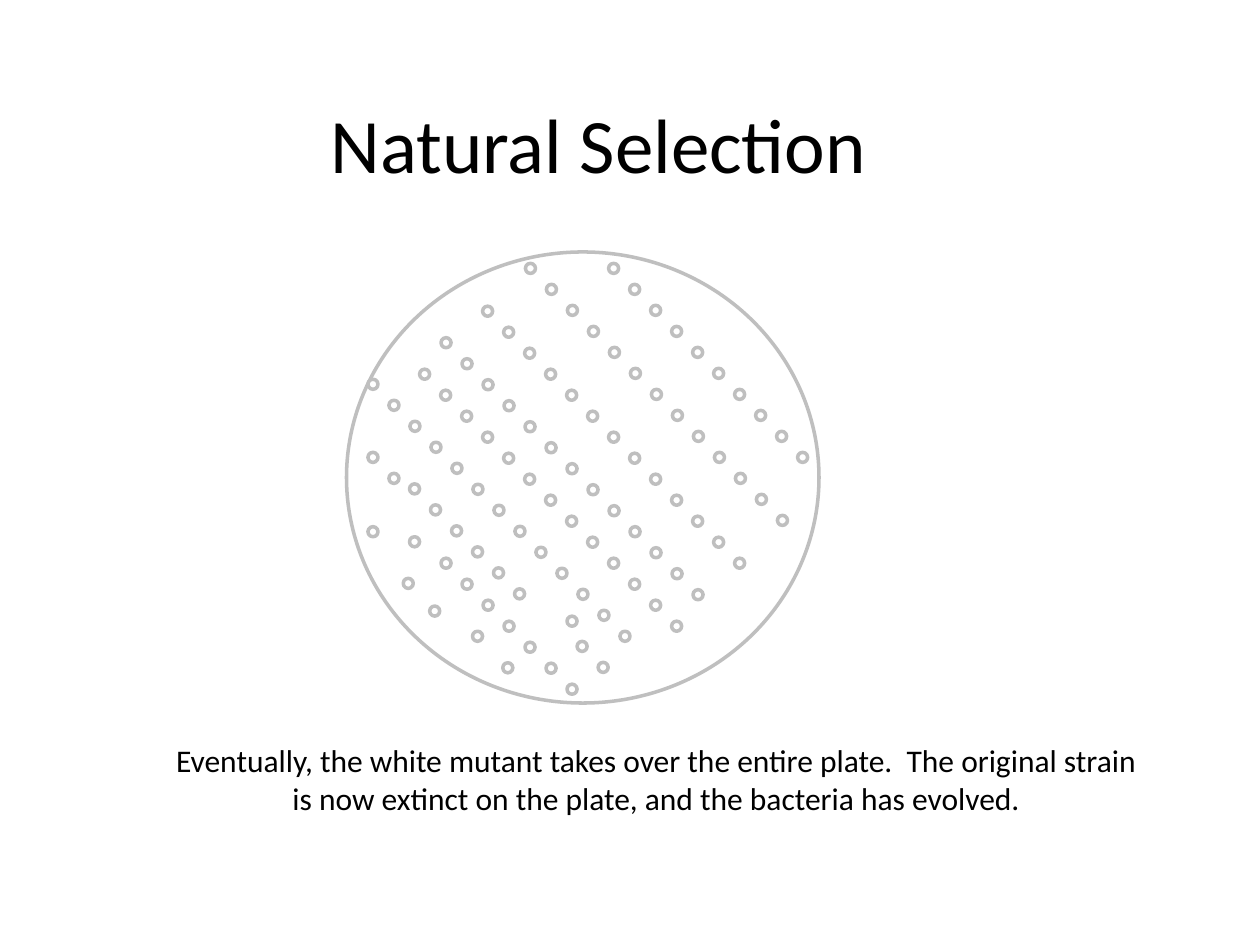
from dataclasses import dataclass

from pptx import Presentation
from pptx import util as u
from pptx.dml.color import RGBColor
from pptx.enum import shapes, text


@dataclass(frozen=True)
class Theme:
    font: str = "Calibri"
    ink: RGBColor = RGBColor(0x00, 0x00, 0x00)
    white: RGBColor = RGBColor(0xFF, 0xFF, 0xFF)
    outline: RGBColor = RGBColor(0xBF, 0xBF, 0xBF)
    outline_width: int = u.Pt(2)
    title_size: int = u.Pt(44)
    caption_size: int = u.Pt(18)


theme = Theme()


def add_ring(slide, left, top, width, height):
    ring = slide.shapes.add_shape(
        shapes.MSO_SHAPE.OVAL,
        u.Inches(left), u.Inches(top), u.Inches(width), u.Inches(height),
    )
    ring.shadow.inherit = False
    ring.fill.solid()
    ring.fill.fore_color.rgb = theme.white
    ring.line.color.rgb = theme.outline
    ring.line.width = theme.outline_width


def write_centered(frame, wording, size):
    frame.word_wrap = True
    frame.text = wording
    paragraph = frame.paragraphs[0]
    paragraph.alignment = text.PP_ALIGN.CENTER
    font = paragraph.runs[0].font
    font.name = theme.font
    font.size = size
    font.color.rgb = theme.ink


prs = Presentation()
prs.slide_width = u.Inches(10)
prs.slide_height = u.Inches(7.5)
slide = prs.slides.add_slide(prs.slide_layouts[0])

subtitle = slide.placeholders[1]
subtitle.element.getparent().remove(subtitle.element)

title = slide.shapes.title
title.left, title.top = u.Inches(0.5), u.Inches(0.33)
title.width, title.height = u.Inches(8.5), u.Inches(1.61)
title.text_frame.vertical_anchor = text.MSO_ANCHOR.MIDDLE
write_centered(title.text_frame, "Natural Selection", theme.title_size)

add_ring(slide, 2.75, 2, 3.75, 3.58)

colony_size = 0.08
colony_step = 1 / 6
colony_diagonals = [
    (3.33, 2.93, 13),
    (3.5, 2.68, 13),
    (3.83, 2.43, 13),
    (4.17, 2.09, 13),
    (3.2, 4.59, 1),
    (4.83, 2.09, 10),
    (3.75, 5.01, 1),
    (3.5, 4.43, 7),
    (2.92, 3.01, 13),
    (2.92, 4.18, 1),
    (3.25, 3.84, 6),
    (3.99, 5.26, 1),
    (4.58, 5.09, 2),
    (2.92, 3.59, 2),
    (3.25, 4.26, 1),
    (3.41, 4.81, 1),
    (4.5, 4.89, 1),
]
for left, top, count in colony_diagonals:
    for i in range(count):
        shift = i * colony_step
        add_ring(slide, left + shift, top + shift, colony_size, colony_size)

caption = slide.shapes.add_textbox(
    u.Inches(1.21), u.Inches(5.83), u.Inches(8), u.Inches(1.01)
)
write_centered(
    caption.text_frame,
    "Eventually, the white mutant takes over the entire plate.  "
    "The original strain is now extinct on the plate, and the bacteria has evolved.",
    theme.caption_size,
)

prs.save("out.pptx")
